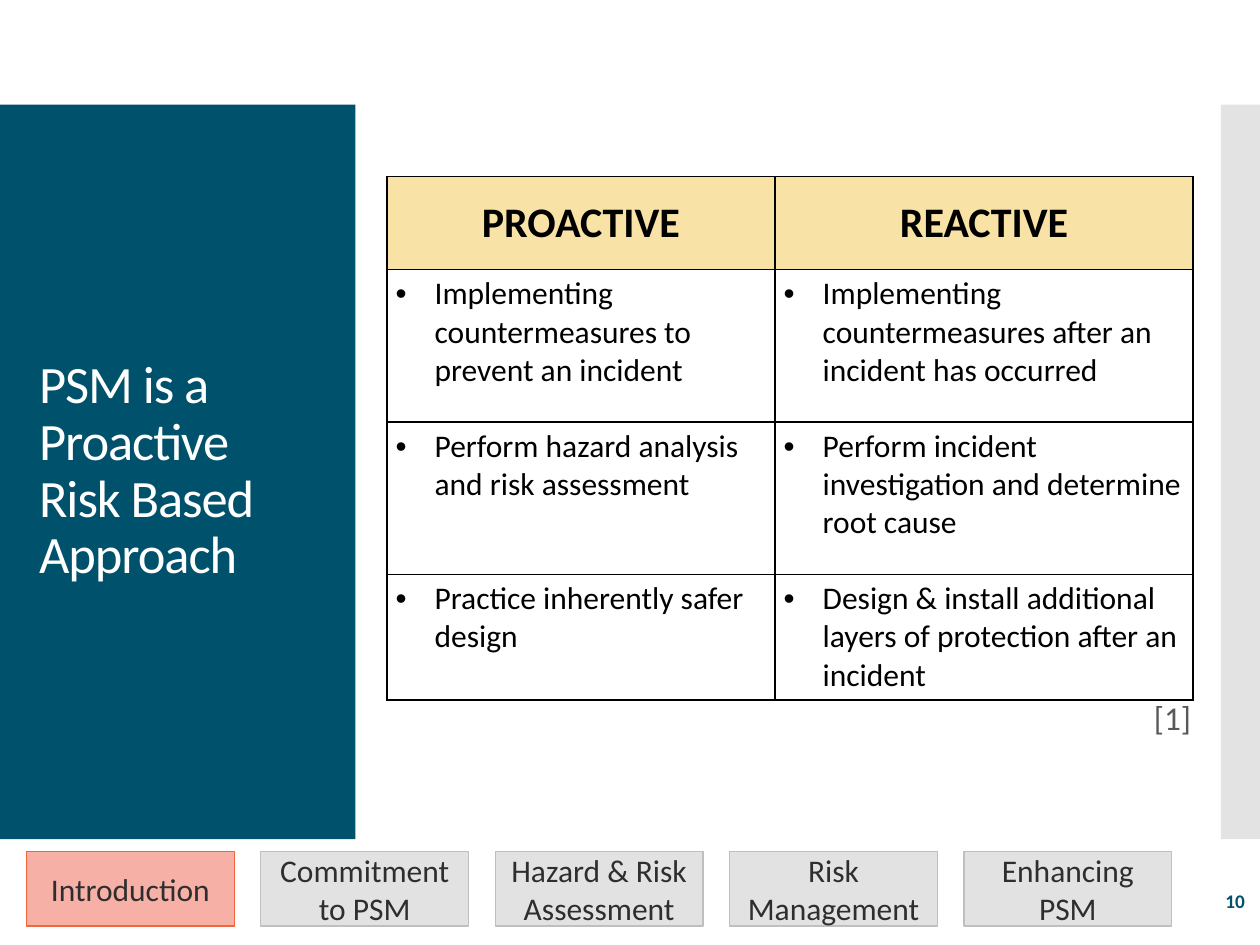
from dataclasses import dataclass

from lxml.etree import SubElement
from pptx import Presentation
from pptx.dml.color import RGBColor as RGB
from pptx.enum.shapes import MSO_SHAPE as Kind
from pptx.enum.text import MSO_ANCHOR as Anchor, MSO_AUTO_SIZE as Fit, PP_ALIGN as Align
from pptx.oxml.ns import qn
from pptx.util import Inches, Pt


@dataclass(frozen=True)
class Theme:
    font: str = "Calibri"
    teal: str = "00516B"
    white: str = "FFFFFF"
    black: str = "000000"
    ink: str = "2E2E2E"
    mute: str = "595959"
    side: str = "C8C8C8"
    head: str = "F9E2A5"
    tab: str = "D9D9D9"
    edge: str = "BFBFBF"
    live: str = "F6B0A6"
    rim: str = "F1663B"
    title_size: int = 30
    head_size: int = 24
    body_size: int = 18
    cite_size: int = 19
    page_size: int = 11


def write(frame, text, *, size, color, font=Theme.font, bold=False, align=Align.LEFT,
          anchor=Anchor.MIDDLE, lead=None, before=None, track=None):
    """Set the frame's only paragraph and return it; track is in points."""
    frame.word_wrap = True
    frame.vertical_anchor = anchor
    para = frame.paragraphs[0]
    para.alignment = align
    if lead:
        para.line_spacing = lead
    if before:
        para.space_before = Pt(before)
    run = para.add_run()
    run.text = text
    run.font.name, run.font.size, run.font.bold = font, Pt(size), bold
    run.font.color.rgb = RGB.from_string(color)
    if track:
        run.font._element.set("spc", str(round(track * 100)))
    return para


def bullet(para, dent):
    props = para._p.get_or_add_pPr()
    props.set("marL", str(Inches(dent)))
    props.set("indent", str(-Inches(dent)))
    SubElement(props, qn("a:buFont"), typeface="Arial")
    SubElement(props, qn("a:buChar"), char="•")


def border(cell, color, width):
    props = cell._tc.get_or_add_tcPr()
    for side in ("lnL", "lnR", "lnT", "lnB"):
        line = SubElement(props, qn(f"a:{side}"), w=str(Pt(width)))
        fill = SubElement(line, qn("a:solidFill"))
        SubElement(fill, qn("a:srgbClr"), val=color)


class Deck:
    def __init__(self, theme):
        self.theme = theme
        self.file = Presentation()
        self.file.slide_width, self.file.slide_height = Inches(10), Inches(7.5)
        self.slide = self.file.slides.add_slide(self.file.slide_layouts[5])
        self.shapes = self.slide.shapes

    def box(self, at, fill, line=None, alpha=None):
        shape = self.shapes.add_shape(Kind.RECTANGLE, *map(Inches, at))
        shape.shadow.inherit = False
        shape.fill.solid()
        shape.fill.fore_color.rgb = RGB.from_string(fill)
        if alpha:
            tint = shape.element.spPr.find(qn("a:solidFill"))[0]
            SubElement(tint, qn("a:alpha"), val=str(alpha * 1000))
        if line:
            shape.line.color.rgb = RGB.from_string(line)
            shape.line.width = Pt(0.75)
        else:
            shape.line.fill.background()
        return shape

    def title(self, at, text):
        """Fill the title and lift it above the panels drawn so far."""
        shape = self.shapes.title
        shape.left, shape.top, shape.width, shape.height = map(Inches, at)
        shape.text_frame.auto_size = Fit.NONE
        write(shape.text_frame, text, size=self.theme.title_size,
              color=self.theme.white, lead=0.9, track=-0.6)
        shape.element.getparent().append(shape.element)

    def label(self, at, text, **style):
        shape = self.shapes.add_textbox(*map(Inches, at))
        write(shape.text_frame, text, **style)

    def table(self, left, top, cols, rows, data):
        look = self.theme
        size = map(Inches, (left, top, sum(cols), sum(rows)))
        grid = self.shapes.add_table(len(rows), len(cols), *size).table
        grid.horz_banding = False
        for col, width in zip(grid.columns, cols):
            col.width = Inches(width)
        for row, height in zip(grid.rows, rows):
            row.height = Inches(height)
        for r, texts in enumerate(data):
            for c, text in enumerate(texts):
                cell = grid.cell(r, c)
                cell.margin_left = cell.margin_right = Inches(0.07)
                cell.margin_top = cell.margin_bottom = Inches(0.04)
                border(cell, look.black, 1)
                cell.fill.solid()
                cell.fill.fore_color.rgb = RGB.from_string(look.white if r else look.head)
                cell.vertical_anchor = Anchor.TOP if r else Anchor.MIDDLE
                para = write(cell.text_frame, text, color=look.black, bold=not r,
                             size=look.body_size if r else look.head_size,
                             align=Align.LEFT if r else Align.CENTER,
                             anchor=None)
                if r:
                    bullet(para, 0.31)

    def tabs(self, names, live):
        look = self.theme
        for i, name in enumerate(names):
            at = (0.21 + 1.86 * i, 6.76, 1.65, 0.59)
            if name == live:
                shape = self.box(at, look.live, look.rim)
            else:
                shape = self.box(at, look.tab, look.edge, 75)
            write(shape.text_frame, name, size=look.body_size, color=look.ink,
                  align=Align.CENTER)


def main():
    look = Theme()
    deck = Deck(look)
    deck.box((0, 0.83, 2.82, 5.83), look.teal)
    deck.box((9.69, 0.83, 0.31, 5.83), look.side, alpha=50)
    deck.title((0.21, 1.23, 2.42, 5.03), "PSM is a Proactive Risk Based Approach")
    deck.table(3.07, 1.4, (3.08, 3.32), (0.74, 1.21, 1.21, 0.83), [
        ("PROACTIVE", "REACTIVE"),
        ("Implementing countermeasures to prevent an incident",
         "Implementing countermeasures after an incident has occurred"),
        ("Perform hazard analysis and risk assessment",
         "Perform incident investigation and determine root cause"),
        ("Practice inherently safer design",
         "Design & install additional layers of protection after an incident"),
    ])
    deck.label((8.72, 6.95, 1.26, 0.4), "10", size=look.page_size, color=look.teal,
               bold=True, align=Align.RIGHT)
    deck.label((9.06, 5.37, 0.57, 0.68), "[1]", size=look.cite_size, color=look.mute,
               lead=0.9, before=12)
    deck.tabs(("Introduction", "Commitment to PSM", "Hazard & Risk Assessment",
               "Risk Management", "Enhancing PSM"), live="Introduction")
    deck.file.save("out.pptx")


if __name__ == "__main__":
    main()
